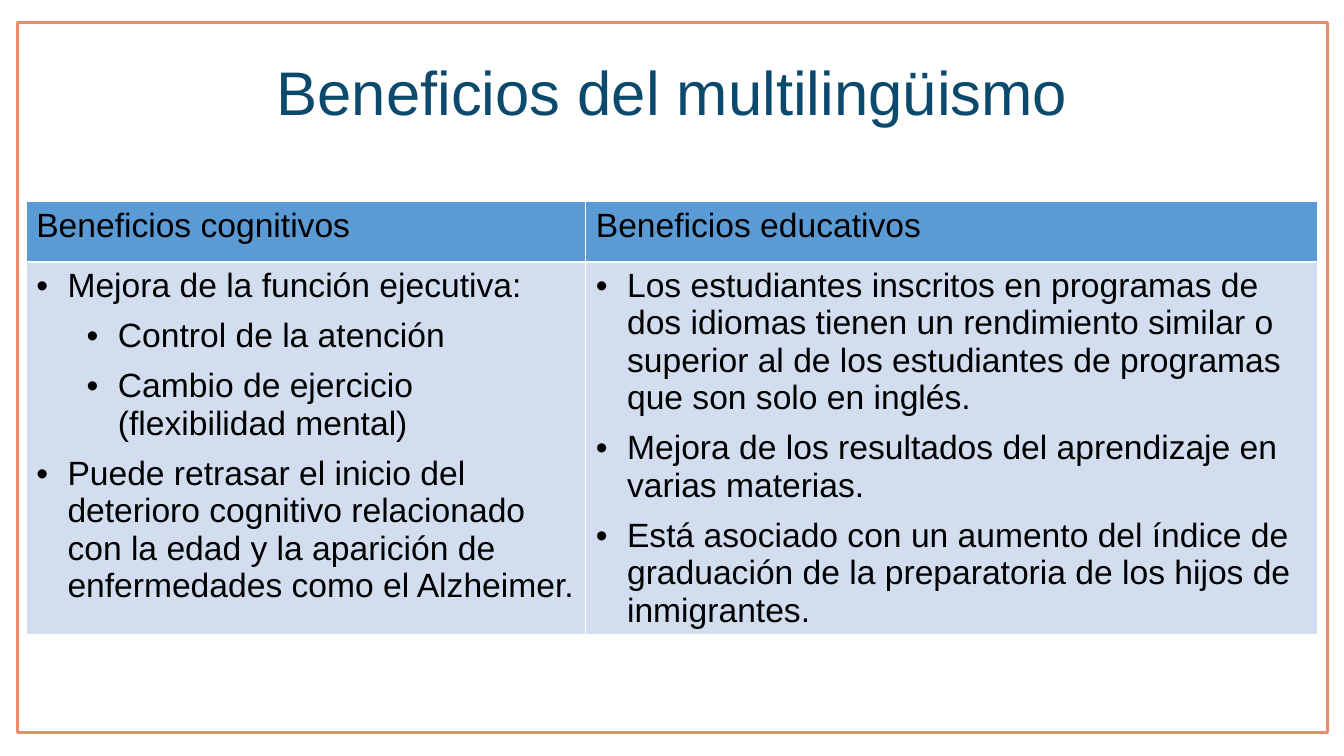
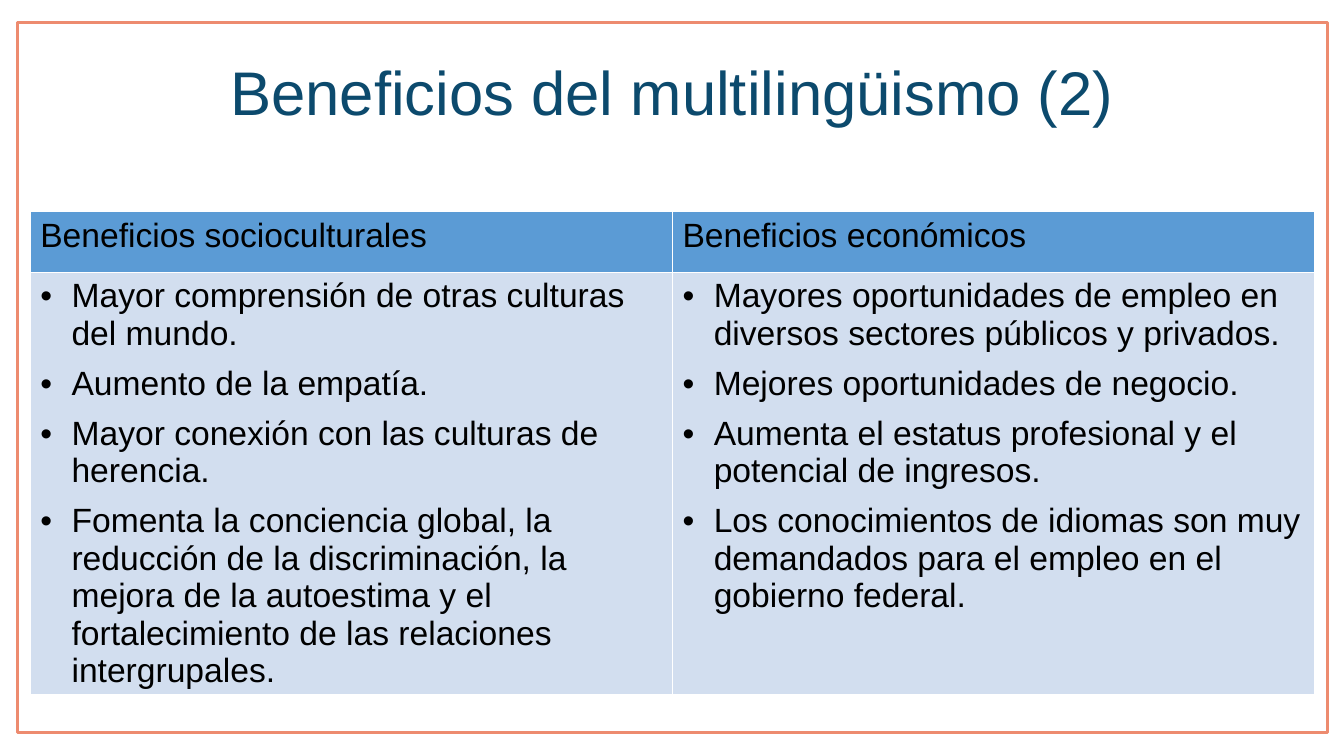
from lxml import etree
from pptx import Presentation
from pptx import util as u
from pptx.dml.color import RGBColor
from pptx.enum import shapes, text
from pptx.oxml import ns

# Shared style
COLORS = {
    "frame": "ED8B6F",
    "title": "0C4A6D",
    "header": "5B9BD5",
    "body": "D2DEEF",
    "text": "000000",
    "border": "FFFFFF",
}
FONT = "Arial"
FRAME_LEFT, FRAME_TOP, FRAME_WIDTH, FRAME_HEIGHT = 0.17, 0.22, 13, 7.05
TITLE_HEIGHT = 1.45
HEADER_HEIGHT = 0.6
BULLET_INDENT, LEVEL_STEP = 0.31, 0.5

# Each bullet is (level, text)
COGNITIVE = [
    (0, "Mejora de la función ejecutiva:"),
    (1, "Control de la atención"),
    (1, "Cambio de ejercicio (flexibilidad mental)"),
    (0, "Puede retrasar el inicio del deterioro cognitivo relacionado con la edad "
        "y la aparición de enfermedades como el Alzheimer."),
]
EDUCATIONAL = [
    (0, "Los estudiantes inscritos en programas de dos idiomas tienen un rendimiento "
        "similar o superior al de los estudiantes de programas que son solo en inglés."),
    (0, "Mejora de los resultados del aprendizaje en varias materias."),
    (0, "Está asociado con un aumento del índice de graduación de la preparatoria "
        "de los hijos de inmigrantes."),
]
SOCIOCULTURAL = [
    (0, "Mayor comprensión de otras culturas del mundo."),
    (0, "Aumento de la empatía."),
    (0, "Mayor conexión con las culturas de herencia."),
    (0, "Fomenta la conciencia global, la reducción de la discriminación, la mejora "
        "de la autoestima y el fortalecimiento de las relaciones intergrupales."),
]
ECONOMIC = [
    (0, "Mayores oportunidades de empleo en diversos sectores públicos y privados."),
    (0, "Mejores oportunidades de negocio."),
    (0, "Aumenta el estatus profesional y el potencial de ingresos."),
    (0, "Los conocimientos de idiomas son muy demandados para el empleo "
        "en el gobierno federal."),
]


def color(name):
    return RGBColor.from_string(COLORS[name])


def set_font(paragraph, size, color_name):
    paragraph.font.name = FONT
    paragraph.font.size = u.Pt(size)
    paragraph.font.color.rgb = color(color_name)


def add_frame(slide):
    shape = slide.shapes.add_shape(
        shapes.MSO_SHAPE.RECTANGLE, u.Inches(FRAME_LEFT), u.Inches(FRAME_TOP),
        u.Inches(FRAME_WIDTH), u.Inches(FRAME_HEIGHT))
    shape.shadow.inherit = False
    shape.fill.background()
    shape.line.color.rgb = color("frame")
    shape.line.width = u.Pt(2)


def set_title(slide, title_text):
    title = slide.shapes.title
    title.left, title.top = u.Inches(FRAME_LEFT), u.Inches(FRAME_TOP)
    title.width, title.height = u.Inches(FRAME_WIDTH), u.Inches(TITLE_HEIGHT)
    title.text_frame.text = title_text
    title.text_frame.vertical_anchor = text.MSO_ANCHOR.MIDDLE
    paragraph = title.text_frame.paragraphs[0]
    paragraph.alignment = text.PP_ALIGN.CENTER
    paragraph.line_spacing = 0.9
    set_font(paragraph, 44, "title")


def add_title_slide(presentation, title_text):
    slide = presentation.slides.add_slide(presentation.slide_layouts.get_by_name("Title Only"))
    add_frame(slide)
    set_title(slide, title_text)
    return slide


def style_cell(cell, fill_name):
    cell.fill.solid()
    cell.fill.fore_color.rgb = color(fill_name)
    properties = cell._tc.get_or_add_tcPr()
    # Border lines come before the fill
    for position, side in enumerate(("lnL", "lnR", "lnT", "lnB")):
        line = etree.Element(ns.qn(f"a:{side}"), w=str(u.Pt(1)))
        solid_fill = etree.SubElement(line, ns.qn("a:solidFill"))
        etree.SubElement(solid_fill, ns.qn("a:srgbClr"), val=COLORS["border"])
        properties.insert(position, line)


def set_bullet(paragraph, level):
    paragraph.level = level
    properties = paragraph._p.get_or_add_pPr()
    properties.set("marL", str(u.Inches(BULLET_INDENT + level * LEVEL_STEP)))
    properties.set("indent", str(-u.Inches(BULLET_INDENT)))
    etree.SubElement(properties, ns.qn("a:buFont"), typeface=FONT)
    etree.SubElement(properties, ns.qn("a:buChar"), char="•")


def fill_header(cell, heading):
    style_cell(cell, "header")
    cell.text = heading
    set_font(cell.text_frame.paragraphs[0], 24, "text")


def fill_bullets(cell, bullets):
    style_cell(cell, "body")
    frame = cell.text_frame
    for index, (level, bullet_text) in enumerate(bullets):
        paragraph = frame.add_paragraph() if index else frame.paragraphs[0]
        paragraph.text = bullet_text
        paragraph.space_before = u.Pt(9 if index else 0)
        set_bullet(paragraph, level)
        set_font(paragraph, 24, "text")


def add_benefits_table(slide, left, top, widths, body_height, columns):
    table = slide.shapes.add_table(
        2, len(columns), u.Inches(left), u.Inches(top),
        u.Inches(sum(widths)), u.Inches(HEADER_HEIGHT + body_height)).table
    table.first_row = table.horz_banding = False
    table.rows[0].height = u.Inches(HEADER_HEIGHT)
    table.rows[1].height = u.Inches(body_height)
    for index, (heading, bullets) in enumerate(columns):
        table.columns[index].width = u.Inches(widths[index])
        fill_header(table.cell(0, index), heading)
        fill_bullets(table.cell(1, index), bullets)


def main():
    presentation = Presentation()
    presentation.slide_width = u.Inches(13.33)
    presentation.slide_height = u.Inches(7.5)

    # Cognitive and educational benefits
    slide = add_title_slide(presentation, "Beneficios del multilingüismo")
    add_benefits_table(slide, 0.26, 2, (5.55, 7.26), 3.69, [
        ("Beneficios cognitivos", COGNITIVE),
        ("Beneficios educativos", EDUCATIONAL),
    ])

    # Sociocultural and economic benefits
    slide = add_title_slide(presentation, "Beneficios del multilingüismo (2)")
    add_benefits_table(slide, 0.3, 2.1, (6.37, 6.37), 4.19, [
        ("Beneficios socioculturales", SOCIOCULTURAL),
        ("Beneficios económicos", ECONOMIC),
    ])

    presentation.save("out.pptx")


if __name__ == "__main__":
    main()
